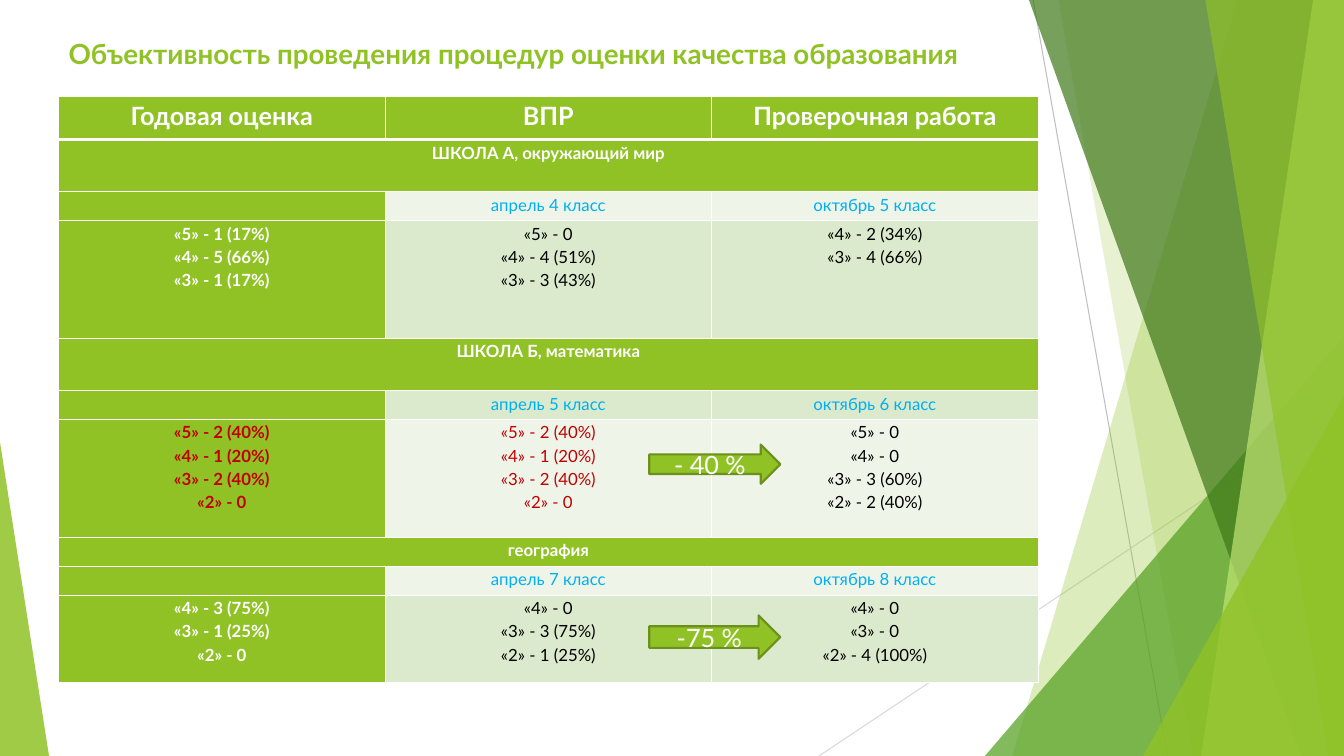
from lxml.etree import SubElement
from pptx import Presentation
from pptx.dml.color import RGBColor
from pptx.enum.shapes import MSO_SHAPE
from pptx.enum.text import MSO_ANCHOR, MSO_AUTO_SIZE, PP_ALIGN
from pptx.oxml.ns import qn
from pptx.util import Pt

COLORS = {
    "green": "90C226", "leaf": "54A021", "forest": "3F7819", "lime": "C0E474",
    "outline": "6B901C", "pale": "EEF4E8", "soft": "DBE9CD", "white": "FFFFFF",
    "black": "000000", "blue": "00B0F0", "red": "C00000",
    "grey": "BFBFBF", "silver": "D9D9D9",
}
FONT = "Lato"

TITLE = "Объективность проведения процедур оценки качества образования"
HEADINGS = ["Годовая оценка", "ВПР", "Проверочная работа"]
SECTIONS = [
    {
        "name": "ШКОЛА А, окружающий мир", "heights": (37.2, 20.7, 84.2),
        "periods": ["апрель 4 класс", "октябрь 5 класс"],
        "marks": [["«5» - 1 (17%)", "«4» - 5 (66%)", "«3» - 1 (17%)"],
                  ["«5» - 0", "«4» - 4 (51%)", "«3» - 3 (43%)"],
                  ["«4» - 2 (34%)", "«3» - 4 (66%)"]],
        "inks": ["white", "black", "black"], "fills": ("pale", "soft"),
    },
    {
        "name": "ШКОЛА Б, математика", "heights": (37.2, 20.7, 84.2),
        "periods": ["апрель 5 класс", "октябрь 6 класс"],
        "marks": [["«5» - 2 (40%)", "«4» - 1 (20%)", "«3» - 2 (40%)", "«2» - 0"],
                  ["«5» - 2 (40%)", "«4» - 1 (20%)", "«3» - 2 (40%)", "«2» - 0"],
                  ["«5» - 0", "«4» - 0", "«3» - 3 (60%)", "«2» - 2 (40%)"]],
        "inks": ["red", "red", "black"], "fills": ("soft", "pale"),
    },
    {
        "name": "география", "heights": (20.7, 20.7, 62.6),
        "periods": ["апрель 7 класс", "октябрь 8 класс"],
        "marks": [["«4» - 3 (75%)", "«3» - 1 (25%)", "«2» - 0"],
                  ["«4» - 0", "«3» - 3 (75%)", "«2» - 1 (25%)"],
                  ["«4» - 0", "«3» - 0", "«2» - 4 (100%)"]],
        "inks": ["white", "black", "black"], "fills": ("pale", "soft"),
    },
]
HEADING_HEIGHT = 31
DROPS = [("- 40 %", 249, 28), ("-75 %", 371, 31)]


def rgb(name):
    """Return the named colour."""
    return RGBColor.from_string(COLORS[name])


def write(frame, lines, size=12, color="white", bold=False,
          align=PP_ALIGN.CENTER, spacing=None):
    """Write one paragraph per line in the given format."""
    for index, line in enumerate(lines):
        paragraph = frame.add_paragraph() if index else frame.paragraphs[0]
        paragraph.alignment = align
        paragraph.line_spacing = spacing
        run = paragraph.add_run()
        run.text = line
        run.font.name = FONT
        run.font.size = Pt(size)
        run.font.bold = bold
        run.font.color.rgb = rgb(color)


def paint(shape, color, opacity=100):
    """Give a shape a flat fill without outline or shadow."""
    shape.shadow.inherit = False
    shape.fill.solid()
    shape.fill.fore_color.rgb = rgb(color)
    shape.line.fill.background()
    if opacity < 100:
        tint = next(shape._element.iter(qn("a:srgbClr")))
        SubElement(tint, qn("a:alpha"), val=str(opacity * 1000))


def add_ray(shapes, start, end, color):
    """Draw a thin line of the backdrop."""
    ray = shapes.add_connector(1, *map(Pt, start + end))
    ray.line.color.rgb = rgb(color)
    ray.line.width = Pt(0.75)
    SubElement(ray._element.spPr, qn("a:effectLst"))


def add_backdrop(shapes, box):
    """Layer the translucent facets along the sides of the box."""
    left, top, width, height = box
    right, bottom = left + width, top + height

    def panel(upper, lower, color, opacity):
        """Add a facet that reaches the right edge."""
        outline = shapes.build_freeform(Pt(left + upper), Pt(top))
        outline.add_line_segments([(Pt(right), Pt(top)), (Pt(right), Pt(bottom)),
                                   (Pt(left + lower), Pt(bottom))])
        paint(outline.convert_to_shape(), color, opacity)

    def corner(x, facet_width, facet_height, apex, color, opacity):
        """Add a triangle that stands on the bottom edge."""
        facet = shapes.add_shape(MSO_SHAPE.ISOSCELES_TRIANGLE, Pt(x), Pt(bottom - facet_height),
                                 Pt(facet_width), Pt(facet_height))
        facet.adjustments[0] = apex
        paint(facet, color, opacity)

    add_ray(shapes, (left + 738, top), (left + 834, bottom), "grey")
    add_ray(shapes, (right, top + 290), (left + 585, bottom), "silver")
    panel(884, 723, "green", 30)
    panel(756, 852, "green", 20)
    corner(right - 256.5, 256.5, 300, 1, "leaf", 72)
    panel(735, 929.5, "forest", 70)
    panel(938, 858, "lime", 70)
    panel(861, 949, "green", 65)
    corner(right - 143.5, 143.5, 257, 1, "green", 80)
    corner(left, 35, 224, 0, "green", 85)


def add_title(slide, box):
    """Place the slide title in the box."""
    title = slide.shapes.title
    title.left, title.top, title.width, title.height = map(Pt, box)
    frame = title.text_frame
    frame.word_wrap = True
    frame.auto_size = MSO_AUTO_SIZE.NONE
    frame.vertical_anchor = MSO_ANCHOR.TOP
    write(frame, [TITLE], size=19.8, color="green", bold=True, align=PP_ALIGN.LEFT)


def fill_cell(cell, lines, fill, top=1, bottom=1, **style):
    """Format one table cell and write its lines."""
    cell.margin_left = cell.margin_right = Pt(3)
    cell.margin_top = cell.margin_bottom = 0
    properties = cell._tc.get_or_add_tcPr()
    for side, weight in (("L", 1), ("R", 1), ("T", top), ("B", bottom)):
        border = SubElement(properties, qn(f"a:ln{side}"), w=str(Pt(weight)))
        SubElement(SubElement(border, qn("a:solidFill")), qn("a:srgbClr"), val=COLORS["white"])
    cell.fill.solid()
    cell.fill.fore_color.rgb = rgb(fill)
    if lines:
        write(cell.text_frame, lines, spacing=1.15, **style)
    else:
        SubElement(cell.text_frame.paragraphs[0]._p, qn("a:endParaRPr"), sz="1200")


def add_marks_table(shapes, box):
    """Build the table of marks, three rows for each section."""
    heights = [HEADING_HEIGHT] + [h for section in SECTIONS for h in section["heights"]]
    table = shapes.add_table(len(heights), len(HEADINGS), *map(Pt, box)).table
    for row, height in zip(table.rows, heights):
        row.height = Pt(height)
    for column, heading in enumerate(HEADINGS):
        table.columns[column].width = Pt(box[2] / len(HEADINGS))
        fill_cell(table.cell(0, column), [heading], "green", bottom=3, size=18, bold=True)
    for index, section in enumerate(SECTIONS):
        first = 1 + 3 * index
        period_fill, marks_fill = section["fills"]
        table.cell(first, 0).merge(table.cell(first, 2))
        for column, (marks, ink) in enumerate(zip(section["marks"], section["inks"])):
            annual = column == 0
            fill_cell(table.cell(first, column), [section["name"]] if annual else [],
                      "green", top=1 if index else 3, bold=True)
            fill_cell(table.cell(first + 1, column),
                      [] if annual else [section["periods"][column - 1]],
                      "green" if annual else period_fill, color="blue")
            fill_cell(table.cell(first + 2, column), marks,
                      "green" if annual else marks_fill, color=ink, bold=annual)


def add_drops(shapes, box):
    """Put the arrows with the falls in results over the table box."""
    left, top, _, _ = box
    for label, offset, height in DROPS:
        arrow = shapes.add_shape(MSO_SHAPE.RIGHT_ARROW, Pt(left + 422), Pt(top + offset),
                                 Pt(93.6), Pt(height))
        paint(arrow, "green")
        arrow.line.color.rgb = rgb("outline")
        arrow.line.width = Pt(1.5)
        arrow.text_frame.vertical_anchor = MSO_ANCHOR.MIDDLE
        write(arrow.text_frame, [label], size=18)


def main():
    """Build the slide and save it."""
    deck = Presentation()
    deck.slide_width, deck.slide_height = Pt(960), Pt(540)
    slide = deck.slides.add_slide(deck.slide_layouts[5])
    table_box = (41.8, 68.6, 699.8, 419.2)
    add_backdrop(slide.shapes, (0, 0, 960, 540))
    add_title(slide, (41.8, 23, 689, 60.5))
    add_marks_table(slide.shapes, table_box)
    add_drops(slide.shapes, table_box)
    deck.save("out.pptx")


if __name__ == "__main__":
    main()
